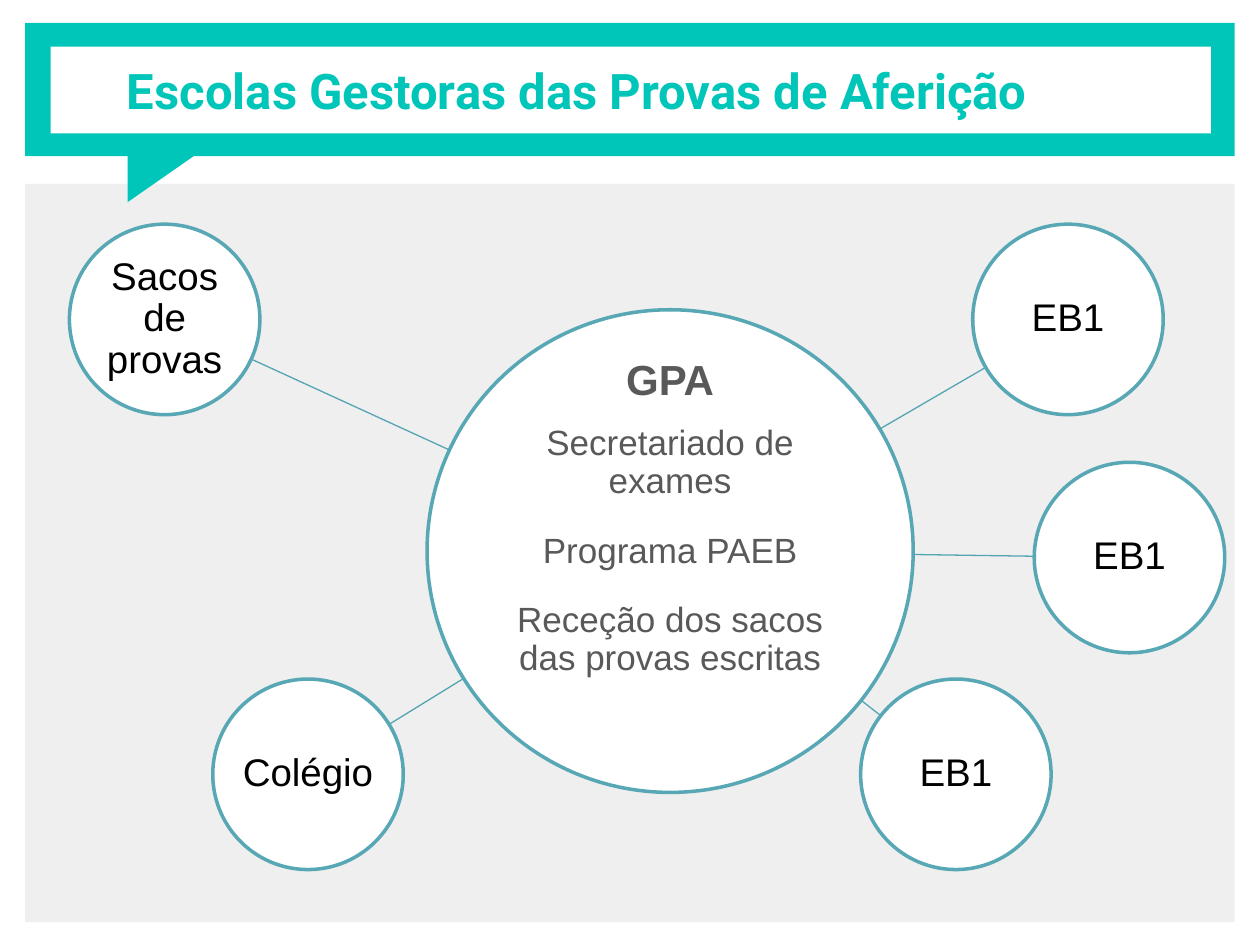
from dataclasses import dataclass
from math import hypot

from lxml import etree
from pptx import Presentation
from pptx.dml.color import RGBColor
from pptx.enum.shapes import MSO_CONNECTOR, MSO_SHAPE
from pptx.enum.text import MSO_ANCHOR, PP_ALIGN
from pptx.oxml.ns import qn
from pptx.util import Cm, Pt

RECTANGLE = MSO_SHAPE.RECTANGLE
RIGHT_TRIANGLE = MSO_SHAPE.RIGHT_TRIANGLE
OVAL = MSO_SHAPE.OVAL
STRAIGHT = MSO_CONNECTOR.STRAIGHT
MIDDLE = MSO_ANCHOR.MIDDLE
CENTER = PP_ALIGN.CENTER


@dataclass(frozen=True)
class Theme:
    accent: str = "00C5B9"
    panel: str = "EFEFEF"
    white: str = "FFFFFF"
    outline: str = "57A7B5"
    link: str = "53A5B3"
    hub_text: str = "595959"
    node_text: str = "000000"
    title_font: str = "Roboto"
    body_font: str = "Arial"
    title_size: int = 28
    heading_size: int = 24
    item_size: int = 20
    node_size: int = 22


THEME = Theme()


@dataclass(frozen=True)
class Circle:
    """An ellipse by its centre and diameters, in centimetres."""
    x: float
    y: float
    width: float
    height: float

    def edge_towards(self, other):
        """Point where the line to the other centre leaves this ellipse."""
        dx, dy = other.x - self.x, other.y - self.y
        reach = hypot(dx / (self.width / 2), dy / (self.height / 2))
        return self.x + dx / reach, self.y + dy / reach


HUB = Circle(13.51, 11.11, 9.8, 9.73)
HUB_HEADING = "GPA"
HUB_ITEMS = [
    "Secretariado de exames",
    "Programa PAEB",
    "Receção dos sacos das provas escritas",
]
NODE_SIZE = 3.84
NODES = [
    ("EB1", 21.53, 6.44),
    ("EB1", 22.77, 11.24),
    ("EB1", 19.27, 15.61),
    ("Colégio", 6.21, 15.61),
    ("Sacos de provas", 3.32, 6.44),
]


def add_block(page, kind, left, top, width, height, fill):
    block = page.shapes.add_shape(kind, Cm(left), Cm(top), Cm(width), Cm(height))
    block.shadow.inherit = False
    block.fill.solid()
    block.fill.fore_color.rgb = RGBColor.from_string(fill)
    block.line.fill.background()
    return block


def prepare_frame(frame, inset):
    frame.word_wrap = True
    frame.vertical_anchor = MIDDLE
    frame.margin_left = frame.margin_right = Cm(inset)
    frame.margin_top = frame.margin_bottom = Cm(inset)


def format_runs(para, font, size, color, bold=False):
    for span in para.runs:
        span.font.name = font
        span.font.size = Pt(size)
        span.font.bold = bold
        span.font.color.rgb = RGBColor.from_string(color)


def add_banner(page, title):
    add_block(page, RECTANGLE, 0.51, 0.46, 24.38, 2.69, THEME.accent)
    tail = add_block(page, RIGHT_TRIANGLE, 2.84, 2.59, 1.22, 1.75, THEME.accent)
    tail.rotation = 90
    add_block(page, RECTANGLE, 1.02, 0.94, 23.39, 1.75, THEME.white)
    box = page.shapes.add_textbox(Cm(2.31), Cm(0.46), Cm(22.1), Cm(2.69))
    prepare_frame(box.text_frame, 0.25)
    box.text_frame.text = title
    format_runs(box.text_frame.paragraphs[0], THEME.title_font,
                THEME.title_size, THEME.accent, bold=True)


def add_circle(page, circle, text):
    oval = add_block(page, OVAL, circle.x - circle.width / 2,
                     circle.y - circle.height / 2,
                     circle.width, circle.height, THEME.white)
    oval.line.color.rgb = RGBColor.from_string(THEME.outline)
    oval.line.width = Pt(2)
    frame = oval.text_frame
    prepare_frame(frame, 0.04)
    frame.text = text
    for para in frame.paragraphs:
        para.alignment = CENTER
        para.line_spacing = 0.9
    return frame


def add_hub(page):
    frame = add_circle(page, HUB, "\n".join([HUB_HEADING, *HUB_ITEMS]))
    frame.margin_bottom = Cm(1.35)
    heading, *items = frame.paragraphs
    format_runs(heading, THEME.body_font, THEME.heading_size,
                THEME.hub_text, bold=True)
    heading.space_after = Pt(12)
    for para in items:
        format_runs(para, THEME.body_font, THEME.item_size, THEME.hub_text)
        para.space_after = Pt(18)
    items[-1].space_after = Pt(0)


def add_node(page, circle, label):
    frame = add_circle(page, circle, label)
    format_runs(frame.paragraphs[0], THEME.body_font, THEME.node_size,
                THEME.node_text)


def add_link(page, start, end):
    """Join two circles edge to edge along the line between their centres."""
    points = start.edge_towards(end) + end.edge_towards(start)
    link = page.shapes.add_connector(STRAIGHT, *(Cm(value) for value in points))
    link.line.color.rgb = RGBColor.from_string(THEME.link)
    link.line.width = Pt(0.75)
    etree.SubElement(link._element.spPr, qn("a:effectLst"))


def main():
    deck = Presentation()
    deck.slide_width, deck.slide_height = Cm(25.4), Cm(19.05)
    page = deck.slides.add_slide(deck.slide_layouts[6])
    add_block(page, RECTANGLE, 0.51, 3.71, 24.38, 14.88, THEME.panel)
    add_banner(page, "Escolas Gestoras das Provas de Aferição")
    add_hub(page)
    for label, x, y in NODES:
        node = Circle(x, y, NODE_SIZE, NODE_SIZE)
        add_link(page, HUB, node)
        add_node(page, node, label)
    deck.save("out.pptx")


if __name__ == "__main__":
    main()
